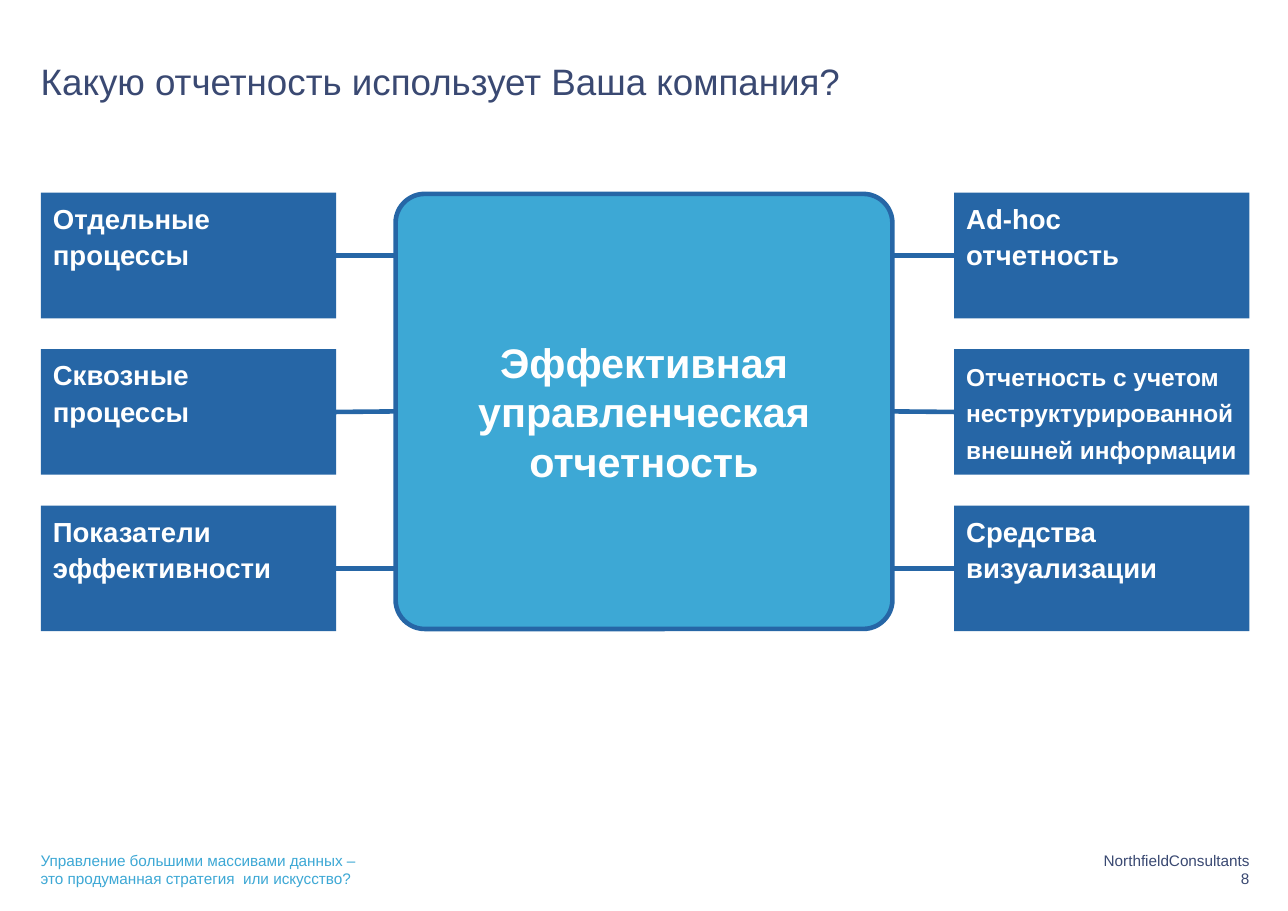
from dataclasses import dataclass

from lxml import etree
from pptx import Presentation
from pptx import util as u
from pptx.dml.color import RGBColor
from pptx.enum import shapes, text
from pptx.oxml.ns import qn


@dataclass(frozen=True)
class Theme:
    font: str = "Arial"
    navy: str = "3A4972"
    blue: str = "2666A6"
    sky: str = "3DA8D5"
    white: str = "FFFFFF"
    title: float = 24
    topic: float = 18
    long_topic: float = 16
    core: float = 27
    footer: float = 10
    topic_leading: float = 23.9
    stroke: float = 3


THEME = Theme()
LEFT, RIGHT = 0.37, 11.34
TOPIC_W, TOPIC_H, TOPIC_TOP, TOPIC_PITCH = 2.68, 1.14, 1.75, 1.42
CORE_BOX = (3.59, 1.76, 4.51, 3.95)

PROCESS_TOPICS = [
    ["Отдельные", "процессы"],
    ["Сквозные", "процессы"],
    ["Показатели", "эффективности"],
]
REPORT_TOPICS = [
    ["Ad-hoc", "отчетность"],
    ["Отчетность с учетом", "неструктурированной", "внешней информации"],
    ["Средства", "визуализации"],
]
CORE_LINES = ["Эффективная", "управленческая", "отчетность"]
TALK_LINES = ["Управление большими массивами данных –",
              "это продуманная стратегия  или искусство?"]
FIRM_LINES = ["NorthfieldConsultants", "8"]


def inches(box):
    return [u.Inches(value) for value in box]


def write(frame, lines, size, color, bold=False, align=text.PP_ALIGN.LEFT,
          leading=None, margins=(0, 0), **frame_format):
    """Fill a text frame, one paragraph per line; margins are (side, top and bottom)."""
    side, edge = inches(margins)
    frame_format = {"word_wrap": True, "vertical_anchor": text.MSO_ANCHOR.TOP,
                    "margin_left": side, "margin_right": side,
                    "margin_top": edge, "margin_bottom": edge, **frame_format}
    for key, value in frame_format.items():
        setattr(frame, key, value)
    for index, line in enumerate(lines):
        paragraph = frame.add_paragraph() if index else frame.paragraphs[0]
        paragraph.alignment = align
        if leading:
            paragraph.line_spacing = u.Pt(leading)
        run = paragraph.add_run()
        run.text = line
        for key, value in {"name": THEME.font, "size": u.Pt(size), "bold": bold}.items():
            setattr(run.font, key, value)
        run.font.color.rgb = RGBColor.from_string(color)


def add_label(slide, box, lines, size, color, **text_format):
    label = slide.shapes.add_textbox(*inches(box))
    write(label.text_frame, lines, size, color, **text_format)


def add_panel(slide, box, preset, fill):
    panel = slide.shapes.add_shape(preset, *inches(box))
    panel.shadow.inherit = False
    panel.fill.solid()
    panel.fill.fore_color.rgb = RGBColor.from_string(fill)
    panel.line.fill.background()
    return panel


def set_stroke(line):
    line.color.rgb = RGBColor.from_string(THEME.blue)
    line.width = u.Pt(THEME.stroke)


def add_core(slide, box):
    core = add_panel(slide, box, shapes.MSO_SHAPE.ROUNDED_RECTANGLE, THEME.sky)
    core.adjustments[0] = 0.067
    set_stroke(core.line)
    write(core.text_frame, CORE_LINES, THEME.core, THEME.white, bold=True,
          align=text.PP_ALIGN.CENTER, margins=(0.11, 0.05), word_wrap=False,
          vertical_anchor=text.MSO_ANCHOR.MIDDLE)
    return core


def add_topic(slide, box, lines):
    topic = add_panel(slide, box, shapes.MSO_SHAPE.RECTANGLE, THEME.blue)
    size = THEME.long_topic if len(lines) > 2 else THEME.topic
    write(topic.text_frame, lines, size, THEME.white, bold=True,
          leading=THEME.topic_leading, margins=(0.11, 0.05), word_wrap=False)
    return topic


def add_link(slide, topic, core, topic_side, core_side):
    """Run level from the topic's side to the core, joined there if the middles meet."""
    middle = topic.top + topic.height // 2
    topic_x = topic.left + (topic.width if topic_side == 3 else 0)
    core_x = core.left + (core.width if core_side == 3 else 0)
    link = slide.shapes.add_connector(
        shapes.MSO_CONNECTOR.STRAIGHT, topic_x, middle, core_x, middle)
    link.begin_connect(topic, topic_side)
    if abs(middle - core.top - core.height // 2) < u.Inches(0.02):
        link.end_connect(core, core_side)
    set_stroke(link.line)
    etree.SubElement(link._element.spPr, qn("a:effectLst"))


def add_topic_column(slide, left, topics, core, topic_side, core_side):
    for row, lines in enumerate(topics):
        box = (left, TOPIC_TOP + row * TOPIC_PITCH, TOPIC_W, TOPIC_H)
        topic = add_topic(slide, box, lines)
        add_link(slide, topic, core, topic_side, core_side)


def add_footer(slide, box):
    left, top, width, height = box
    part_w = 4.04
    bottom = text.MSO_ANCHOR.BOTTOM
    add_label(slide, (left, top, part_w, height), TALK_LINES, THEME.footer,
              THEME.sky, vertical_anchor=bottom)
    add_label(slide, (left + width - part_w, top, part_w, height), FIRM_LINES,
              THEME.footer, THEME.navy, align=text.PP_ALIGN.RIGHT,
              vertical_anchor=bottom)


def main():
    deck = Presentation()
    deck.slide_width, deck.slide_height = inches((11.69, 8.27))
    slide = deck.slides.add_slide(deck.slide_layouts[6])
    add_label(slide, (LEFT, 0.53, RIGHT - LEFT, 0.67),
              ["Какую отчетность использует Ваша компания?"],
              THEME.title, THEME.navy)
    core = add_core(slide, CORE_BOX)
    add_topic_column(slide, LEFT, PROCESS_TOPICS, core, 3, 1)
    add_topic_column(slide, RIGHT - TOPIC_W, REPORT_TOPICS, core, 1, 3)
    add_footer(slide, (LEFT, 7.77, RIGHT - LEFT, 0.29))
    deck.save("out.pptx")


if __name__ == "__main__":
    main()
